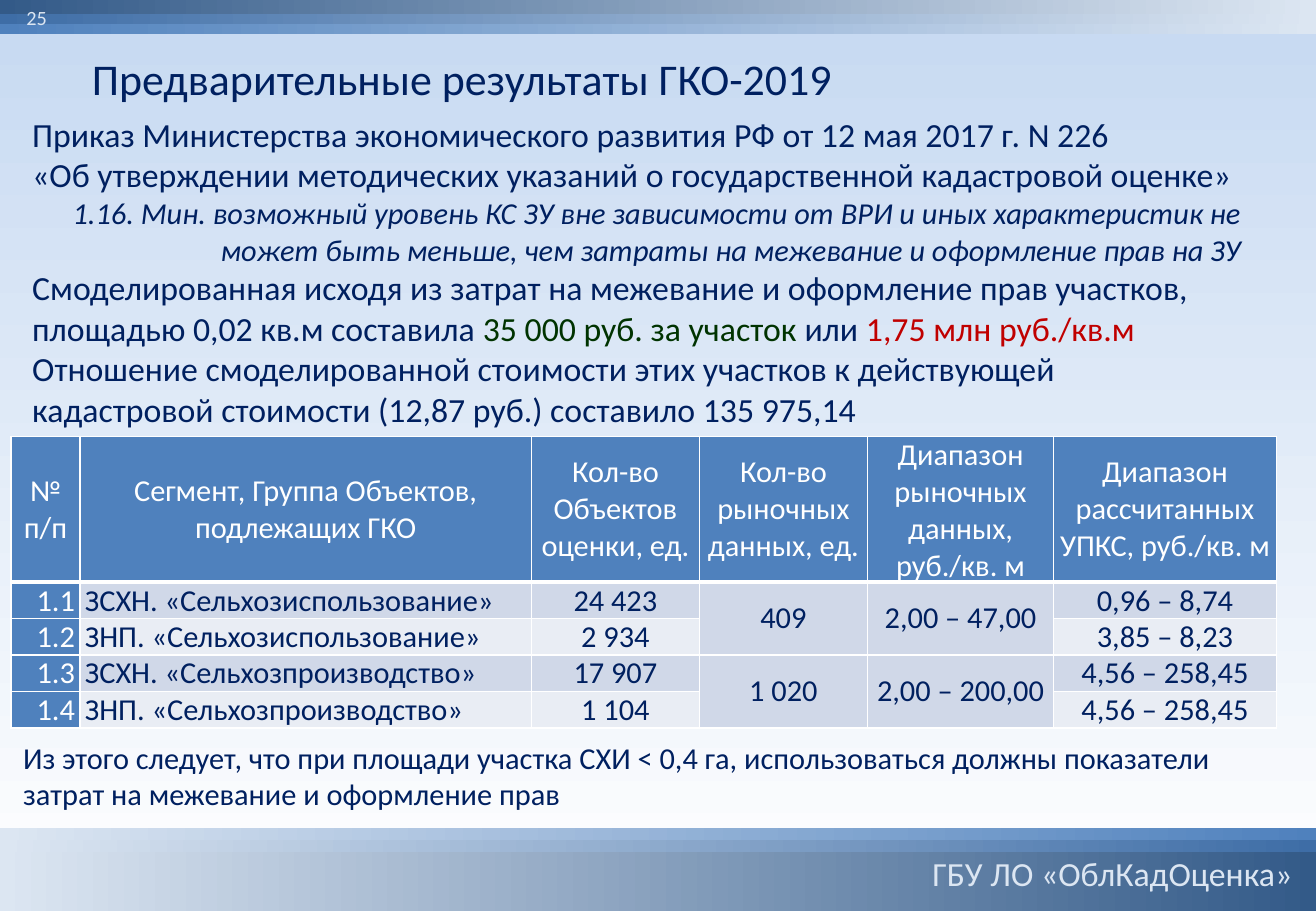
from dataclasses import dataclass

from lxml import etree
from pptx import Presentation
from pptx import util as u
from pptx.dml.color import RGBColor
from pptx.enum import shapes, text
from pptx.oxml.ns import qn

PX = 7620  # EMU in one px (120 px to the inch)
W, H = 1300, 900
LEFT, CENTER, RIGHT = text.PP_ALIGN.LEFT, text.PP_ALIGN.CENTER, text.PP_ALIGN.RIGHT


@dataclass(frozen=True)
class Theme:
    font: str = "Calibri"
    navy: str = "002060"
    green: str = "003300"
    red: str = "C00000"
    white: str = "FFFFFF"
    pale: str = "DCE6F2"
    sky: str = "C6D9F1"
    blue: str = "4F81BD"
    bands: tuple = ("4F81BD", "3E6DA6", "335A88")
    stripes: tuple = ("D0D8E8", "E9EDF4")
    title: int = 26
    body: int = 20
    small: int = 18
    number: int = 12


T = Theme()

ORDER = [
    "Приказ Министерства экономического развития РФ от 12 мая 2017 г. N 226",
    "«Об утверждении методических указаний о государственной кадастровой оценке»",
]
CLAUSE = ("1.16. Мин. возможный уровень КС ЗУ вне зависимости от ВРИ и иных характеристик "
          "не может быть меньше, чем затраты на межевание и оформление прав на ЗУ")
MODELLED = [
    ("Смоделированная исходя из затрат на межевание и оформление прав участков, "
     "площадью 0,02 кв.м составила ", T.navy),
    ("35 000 руб. за участок ", T.green),
    ("или ", T.navy),
    ("1,75 млн руб./кв.м", T.red),
]
RATIO = ("Отношение смоделированной стоимости этих участков к действующей "
         "кадастровой стоимости (12,87 руб.) составило 135 975,14")
CONCLUSION = [
    "Из этого следует, что при площади участка СХИ < 0,4 га, использоваться должны показатели",
    "затрат на межевание и оформление прав",
]

COLS = [68, 446, 166, 166, 184, 220]
HEADER_H, ROW_H = 143, 36
ALIGNS = [RIGHT, LEFT, CENTER, CENTER, CENTER, CENTER]
HEADER = ["№ п/п", "Сегмент, Группа Объектов, подлежащих ГКО", "Кол-во Объектов оценки, ед.",
          "Кол-во рыночных данных, ед.", "Диапазон рыночных данных, руб./кв. м",
          "Диапазон рассчитанных УПКС, руб./кв. м"]
ROWS = [
    ["1.1", "ЗСХН. «Сельхозиспользование»", "24 423", "409", "2,00 – 47,00", "0,96 – 8,74"],
    ["1.2", "ЗНП. «Сельхозиспользование»", "2 934", None, None, "3,85 – 8,23"],
    ["1.3", "ЗСХН. «Сельхозпроизводство»", "17 907", "1 020", "2,00 – 200,00", "4,56 – 258,45"],
    ["1.4", "ЗНП. «Сельхозпроизводство»", "1 104", None, None, "4,56 – 258,45"],
]


def emu(*lengths):
    return [u.Emu(n * PX) for n in lengths]


def write(tf, content, size=T.body, color=T.navy, align=LEFT, italic=False,
          before=0, spacing=None, indent=0):
    """Add one paragraph; content is a string or a list of (string, colour)."""
    p = tf.paragraphs[0]
    if p.runs:
        p = tf.add_paragraph()
    p.alignment = align
    p.space_before = u.Pt(before)
    if spacing:
        p.line_spacing = spacing
    if indent:
        p._p.get_or_add_pPr().set("indent", str(indent * PX))
    for words, tint in [(content, color)] if isinstance(content, str) else content:
        r = p.add_run()
        r.text = words
        r.font.name, r.font.size, r.font.italic = T.font, u.Pt(size), italic
        r.font.color.rgb = RGBColor.from_string(tint)


def text_box(s, box, anchor=text.MSO_ANCHOR.TOP, side=12):
    tf = s.shapes.add_textbox(*emu(*box)).text_frame
    tf.word_wrap = True
    tf.vertical_anchor = anchor
    tf.margin_left, tf.margin_right = emu(side, side)
    return tf


def gradient(fill, start, end, angle):
    fill.gradient()
    fill.gradient_angle = angle
    for stop, color in zip(fill.gradient_stops, (start, end)):
        stop.color.rgb = RGBColor.from_string(color)


def band_strip(s, box, step, at_top):
    """Stack three gradient bands, each thinner by step, against the slide edge."""
    x, y, w, h = box
    for i, color in enumerate(T.bands):
        cut = i * step
        sp = s.shapes.add_shape(shapes.MSO_SHAPE.RECTANGLE,
                                *emu(x, y if at_top else y + cut, w, h - cut))
        sp.shadow.inherit = False
        sp.line.fill.background()
        gradient(sp.fill, color, T.pale, 0 if at_top else 180)


def top_strip(s, box):
    x, y, _, h = box
    band_strip(s, box, 10, True)
    tf = text_box(s, (x + 11, y, 47, h), text.MSO_ANCHOR.MIDDLE)
    write(tf, "25", size=T.number, color=T.pale, align=RIGHT)


def bottom_strip(s, box):
    x, y, w, _ = box
    band_strip(s, box, 12, False)
    tf = text_box(s, (x + w - 401, y + 23, 378, 46), side=0)
    write(tf, "ГБУ ЛО «ОблКадОценка»", color=T.pale, align=RIGHT, spacing=0.9)


def title(s, box):
    write(text_box(s, box, text.MSO_ANCHOR.MIDDLE), "Предварительные результаты ГКО-2019",
          size=T.title, indent=59)


def findings(s, box):
    tf = text_box(s, box)
    for line in ORDER:
        write(tf, line)
    write(tf, CLAUSE, size=T.small, align=RIGHT, italic=True)
    write(tf, MODELLED)
    write(tf, RATIO)


def conclusion(s, box):
    tf = text_box(s, box)
    for line in CONCLUSION:
        write(tf, line, size=T.small)


def borders(cell, top, bottom):
    """Draw white borders, with top and bottom widths in points."""
    tcPr = cell._tc.get_or_add_tcPr()
    for side, width in (("L", 1), ("R", 1), ("T", top), ("B", bottom)):
        ln = etree.SubElement(tcPr, qn("a:ln" + side), w=str(u.Pt(width)))
        fill = etree.SubElement(ln, qn("a:solidFill"))
        etree.SubElement(fill, qn("a:srgbClr"), val=T.white)


def results_table(s, box):
    tbl = s.shapes.add_table(len(ROWS) + 1, len(COLS), *emu(*box)).table
    tbl.horz_banding = False
    for col, width in zip(tbl.columns, emu(*COLS)):
        col.width = width
    for i, values in enumerate([HEADER] + ROWS):
        head = i == 0
        tbl.rows[i].height = u.Emu((HEADER_H if head else ROW_H) * PX)
        for j, value in enumerate(values):
            cell = tbl.cell(i, j)
            accent = head or j == 0
            borders(cell, 3 if i == 1 else 1, 3 if head else 1)
            cell.fill.solid()
            cell.fill.fore_color.rgb = RGBColor.from_string(
                T.blue if accent else T.stripes[(i - 1) % 2])
            cell.vertical_anchor = text.MSO_ANCHOR.MIDDLE
            cell.margin_left, cell.margin_right, cell.margin_top, cell.margin_bottom = emu(5, 5, 0, 0)
            if value is None:
                tbl.cell(i - 1, j).merge(cell)
            else:
                write(cell.text_frame, value, size=T.small, color=T.white if accent else T.navy,
                      align=CENTER if head else ALIGNS[j], before=3 if head else 0)


def main():
    prs = Presentation()
    prs.slide_width, prs.slide_height = emu(W, H)
    s = prs.slides.add_slide(prs.slide_layouts[6])
    gradient(s.background.fill, T.sky, T.white, 270)
    bottom_strip(s, (0, 818, W, 82))
    top_strip(s, (0, 0, W, 34))
    title(s, (20, 42, 822, 70))
    findings(s, (20, 106, 1218, 328))
    results_table(s, (11, 431, sum(COLS), HEADER_H + ROW_H * len(ROWS)))
    conclusion(s, (11, 724, 1211, 85))
    prs.save("out.pptx")


if __name__ == "__main__":
    main()
